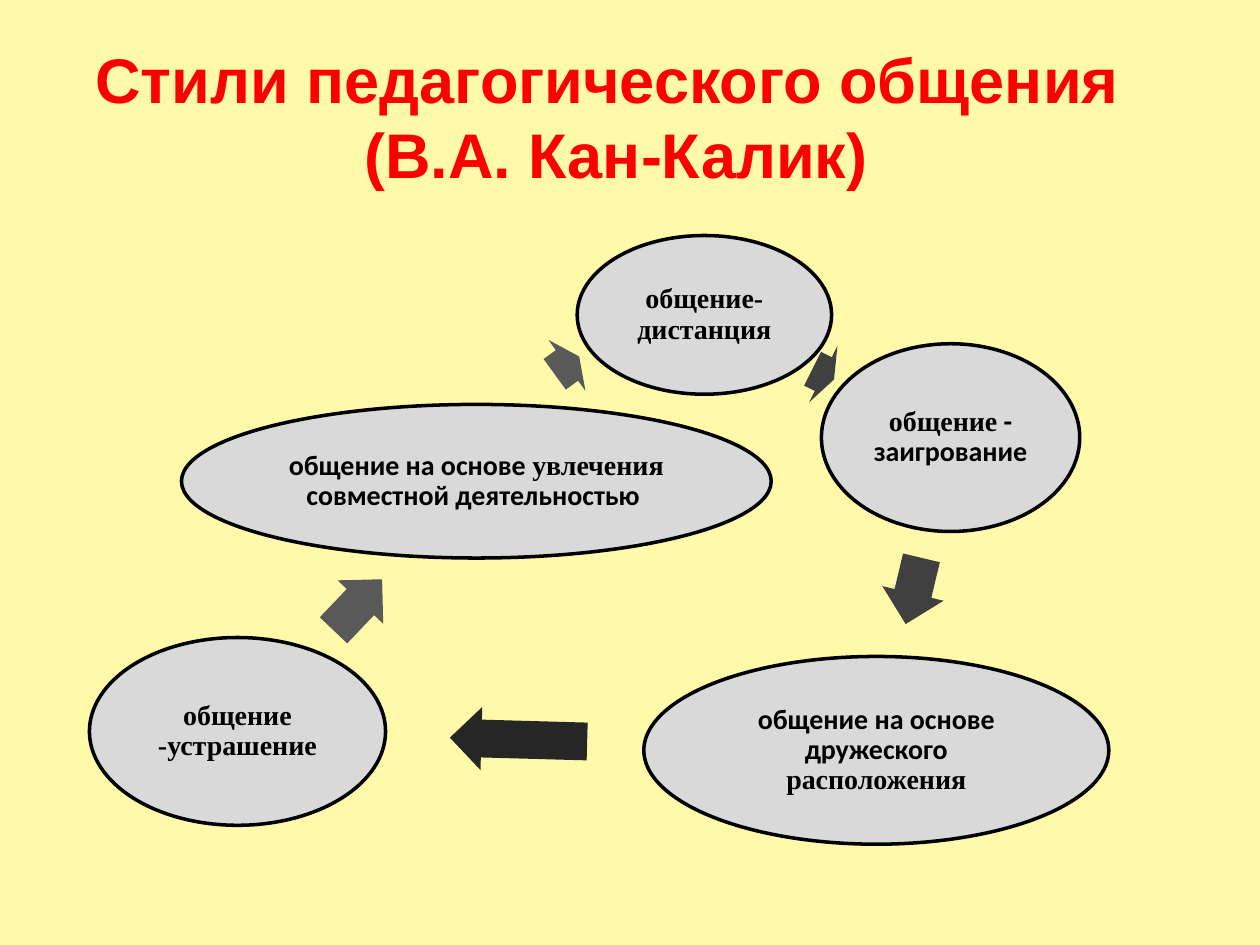
from pptx import Presentation
from pptx.dml.color import RGBColor
from pptx.enum.shapes import MSO_SHAPE
from pptx.enum.text import MSO_ANCHOR, MSO_AUTO_SIZE, PP_ALIGN
from pptx.util import Pt

COLORS = {"background": "FFFAA9", "title": "FF0000", "ellipse": "D9D9D9",
          "ink": "000000", "dark": "262626", "medium": "404040", "light": "595959"}
SERIF, SANS = "Times New Roman", "Calibri"
TITLE = "Стили педагогического общения \v(В.А. Кан-Калик)"
ARROW_HEIGHT = 36

# Each style: text runs, ellipse (left, top, width, height),
# and the arrow after it (centre x, centre y, length, rotation, colour)
STYLES = [
    ([("общение-дистанция", SERIF)],
     (329.8, 134.6, 145.4, 90.7), (470.5, 213.8, 13.7, 26.6, "medium")),
    ([("общение", SERIF), (" - заигрование", SANS)],
     (469.4, 196.4, 147.6, 107.3), (522, 337.7, 38.9, 103.4, "medium")),
    ([("общение на основе дружеского ", SANS), ("расположения", SERIF)],
     (367.9, 375.1, 265.7, 107.3), (296.3, 422.6, 78.5, 181.6, "dark")),
    ([("общение -устрашение", SERIF)],
     (51.1, 364.3, 169.2, 107.3), (204.5, 345.6, 40.3, 313.6, "light")),
    ([("общение на основе ", SANS), ("увлечения", SERIF),
      (" совместной деятельностью ", SANS)],
     (103.7, 231.1, 337, 87.8), (324, 208.8, 17.3, 324, "light")),
]


def rgb(name):
    return RGBColor.from_string(COLORS[name])


def add_filled(s, kind, box, color):
    sp = s.shapes.add_shape(kind, *map(Pt, box))
    sp.shadow.inherit = False
    sp.fill.solid()
    sp.fill.fore_color.rgb = rgb(color)
    return sp


def add_title(s):
    sp = s.shapes.title
    sp.left, sp.top, sp.width, sp.height = map(Pt, (20.2, 15.1, 663.8, 102.2))
    tf = sp.text_frame
    tf.text = TITLE
    tf.auto_size = MSO_AUTO_SIZE.NONE
    tf.vertical_anchor = MSO_ANCHOR.MIDDLE
    p = tf.paragraphs[0]
    p.alignment = PP_ALIGN.CENTER
    p.font.name, p.font.size, p.font.bold = "Arial", Pt(36), True
    p.font.color.rgb = rgb("title")


def add_ellipse(s, runs, box):
    sp = add_filled(s, MSO_SHAPE.OVAL, box, "ellipse")
    sp.line.color.rgb = rgb("ink")
    sp.line.width = Pt(2)
    tf = sp.text_frame
    tf.word_wrap = True
    tf.vertical_anchor = MSO_ANCHOR.MIDDLE
    tf.margin_left = tf.margin_right = tf.margin_top = tf.margin_bottom = Pt(1.6)
    p = tf.paragraphs[0]
    p.alignment = PP_ALIGN.CENTER
    p.line_spacing = 0.9
    p.font.size, p.font.bold = Pt(16), True
    p.font.color.rgb = rgb("ink")
    for text, font in runs:
        r = p.add_run()
        r.text = text
        r.font.name = font


def add_arrow(s, x, y, length, rotation, color):
    box = (x - length / 2, y - ARROW_HEIGHT / 2, length, ARROW_HEIGHT)
    sp = add_filled(s, MSO_SHAPE.RIGHT_ARROW, box, color)
    sp.adjustments[0], sp.adjustments[1] = 0.6, 0.5
    sp.rotation = rotation
    sp.line.fill.background()


def main():
    prs = Presentation()
    prs.slide_width, prs.slide_height = Pt(720), Pt(540)
    s = prs.slides.add_slide(prs.slide_layouts[5])
    s.background.fill.solid()
    s.background.fill.fore_color.rgb = rgb("background")
    add_title(s)
    for runs, box, arrow in STYLES:
        add_ellipse(s, runs, box)
        add_arrow(s, *arrow)
    prs.save("out.pptx")


if __name__ == "__main__":
    main()
